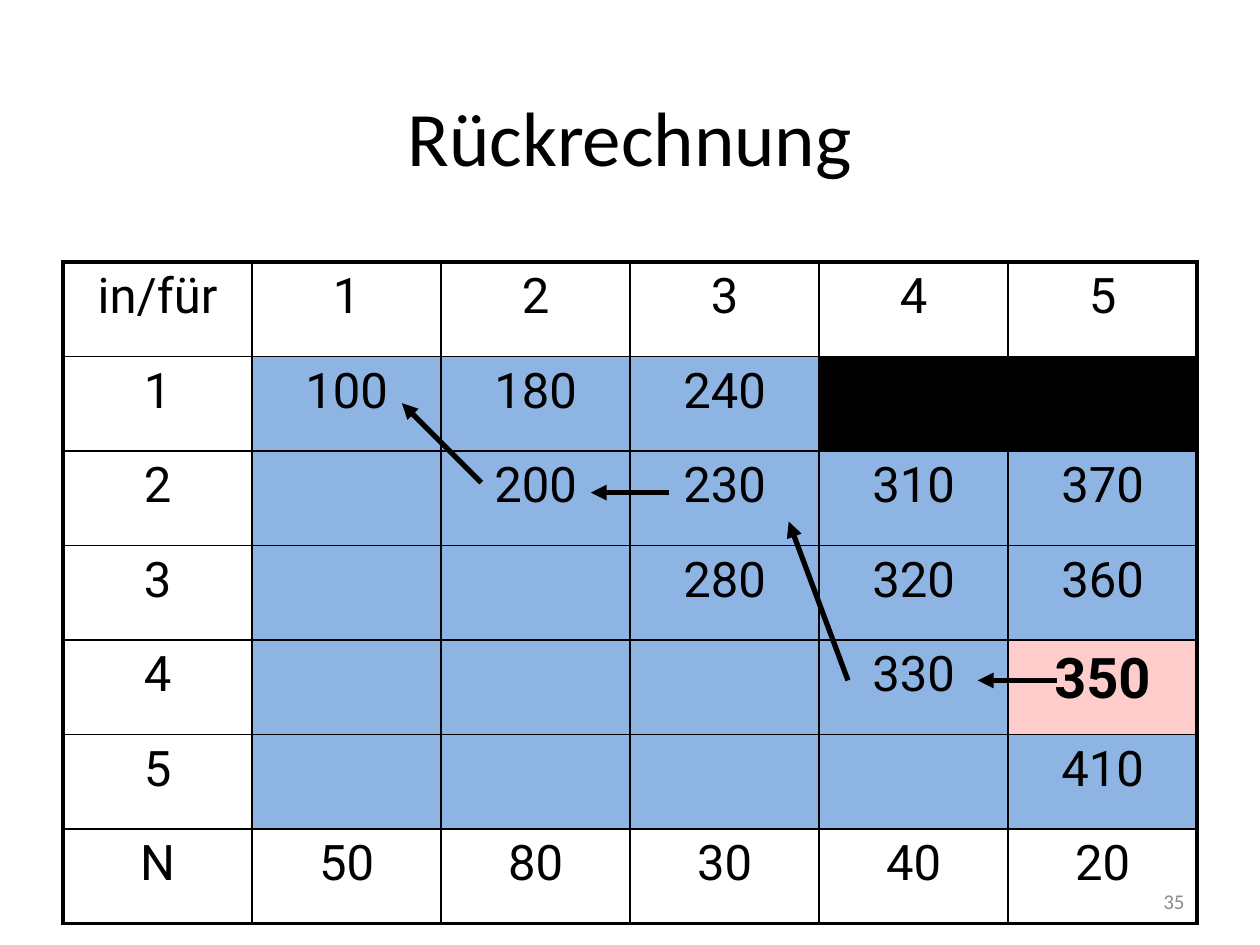
from dataclasses import dataclass

from lxml import etree
from pptx import Presentation
from pptx.dml.color import RGBColor
from pptx.enum.shapes import MSO_CONNECTOR
from pptx.enum.text import MSO_ANCHOR, PP_ALIGN
from pptx.oxml.ns import qn
from pptx.util import Inches, Pt

LEFT, CENTER, RIGHT = PP_ALIGN.LEFT, PP_ALIGN.CENTER, PP_ALIGN.RIGHT
MIDDLE = MSO_ANCHOR.MIDDLE
STRAIGHT = MSO_CONNECTOR.STRAIGHT


@dataclass(frozen=True)
class Theme:
    black: str = "000000"
    white: str = "FFFFFF"
    blue: str = "8EB4E3"
    pink: str = "FFCCCC"
    gray: str = "8C8C8C"
    heading_font: str = "Calibri"
    table_font: str = "Roboto"
    title_size: int = 44
    cell_size: int = 28
    highlight_size: int = 32
    number_size: int = 12
    outer_border: float = 2.25
    inner_border: float = 1
    arrow_width: float = 3


theme = Theme()


def write_text(frame, text, *, size, font=theme.heading_font, color=theme.black,
               bold=False, align=LEFT):
    paragraph = frame.paragraphs[0]
    paragraph.alignment = align
    run = paragraph.add_run()
    run.text = text
    run.font.name = font
    run.font.size = Pt(size)
    run.font.bold = bold
    run.font.color.rgb = RGBColor.from_string(color)
    return paragraph


def add_border(cell, side, width):
    line = etree.SubElement(cell._tc.get_or_add_tcPr(), qn(f"a:ln{side}"), w=str(Pt(width)))
    fill = etree.SubElement(line, qn("a:solidFill"))
    etree.SubElement(fill, qn("a:srgbClr"), val=theme.black)


presentation = Presentation()
presentation.slide_width = Inches(10)
presentation.slide_height = Inches(7.5)
slide = presentation.slides.add_slide(presentation.slide_layouts[5])

title = slide.shapes.title
title.left, title.top = Inches(0.5), Inches(0.32)
title.width, title.height = Inches(9), Inches(1.51)
title.text_frame.vertical_anchor = MIDDLE
write_text(title.text_frame, "Rückrechnung", size=theme.title_size, align=CENTER)

rows = [
    ["in/für", "1", "2", "3", "4", "5"],
    ["1", "100", "180", "240", "", ""],
    ["2", "", "200", "230", "310", "370"],
    ["3", "", "", "280", "320", "360"],
    ["4", "", "", "", "330", "350"],
    ["5", "", "", "", "", "410"],
    ["N", "50", "80", "30", "40", "20"],
]
last_row, last_column = len(rows) - 1, len(rows[0]) - 1
blocked_cells = {(1, 4), (1, 5)}
highlight_cell = (4, 5)

table = slide.shapes.add_table(
    len(rows), len(rows[0]), Inches(0.5), Inches(2.08), Inches(9), Inches(5.25)
).table
table.first_row = False
table.horz_banding = False

for row, values in enumerate(rows):
    for column, value in enumerate(values):
        cell = table.cell(row, column)
        outer_sides = {"L": column == 0, "R": column == last_column,
                       "T": row == 0, "B": row == last_row}
        for side, is_outer in outer_sides.items():
            add_border(cell, side, theme.outer_border if is_outer else theme.inner_border)

        highlighted = (row, column) == highlight_cell
        if highlighted:
            color = theme.pink
        elif (row, column) in blocked_cells:
            color = theme.black
        elif row in (0, last_row) or column == 0:
            color = theme.white
        else:
            color = theme.blue
        cell.fill.solid()
        cell.fill.fore_color.rgb = RGBColor.from_string(color)

        if value:
            size = theme.highlight_size if highlighted else theme.cell_size
            paragraph = write_text(cell.text_frame, value, size=size, font=theme.table_font,
                                   bold=highlighted, align=CENTER)
            spacing = etree.SubElement(paragraph._p.get_or_add_pPr(), qn("a:spcBef"))
            etree.SubElement(spacing, qn("a:spcPct"), val="20000")

arrows = [
    (3.19, 3.2, 3.82, 3.83),
    (4.69, 3.91, 5.31, 3.91),
    (6.26, 4.14, 6.73, 5.4),
    (7.76, 5.4, 8.39, 5.4),
]
for ends in arrows:
    arrow = slide.shapes.add_connector(STRAIGHT, *map(Inches, ends))
    arrow.line.color.rgb = RGBColor.from_string(theme.black)
    arrow.line.width = Pt(theme.arrow_width)
    etree.SubElement(arrow.line._get_or_add_ln(), qn("a:headEnd"), type="triangle")
    etree.SubElement(arrow._element.spPr, qn("a:effectLst"))

slide_number = slide.shapes.add_textbox(Inches(7.17), Inches(6.95), Inches(2.33), Inches(0.4))
slide_number.text_frame.word_wrap = True
slide_number.text_frame.vertical_anchor = MIDDLE
write_text(slide_number.text_frame, "35", size=theme.number_size, color=theme.gray, align=RIGHT)

presentation.save("out.pptx")
